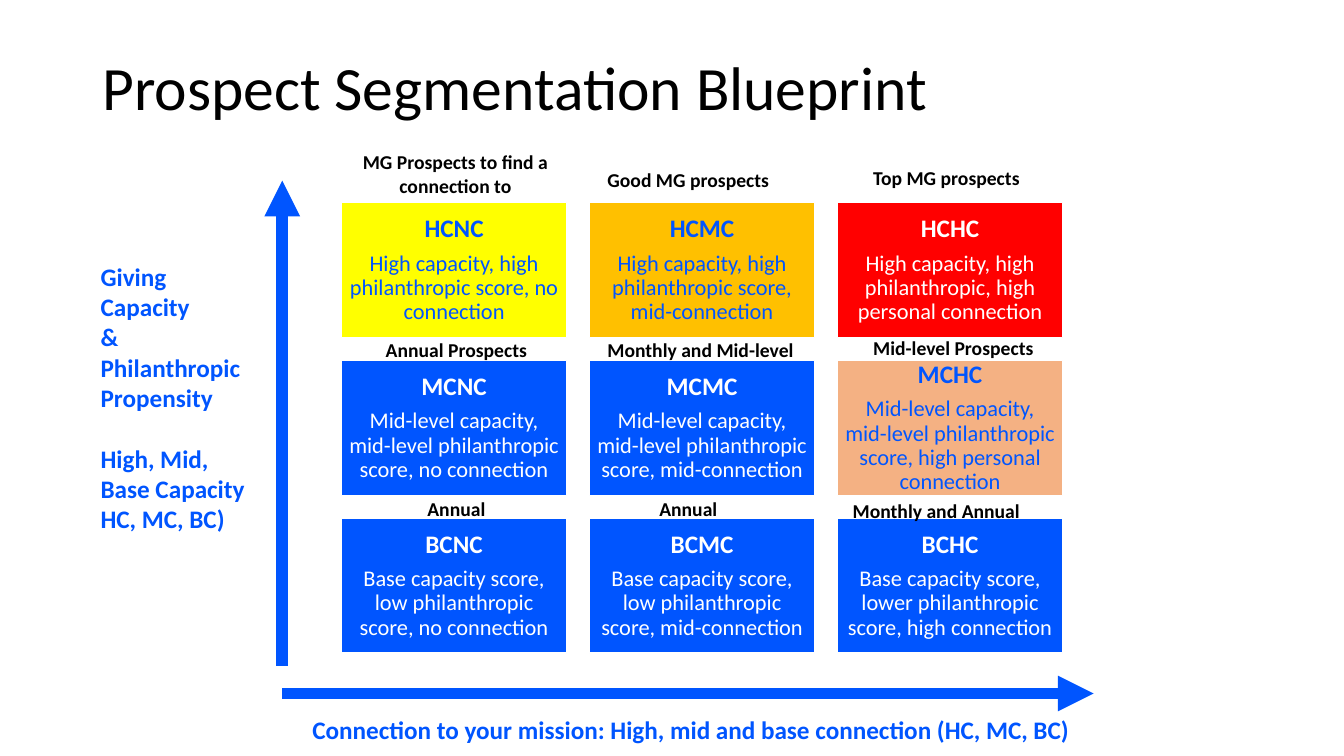
import pptx
import pptx.dml.color
import pptx.enum.shapes
import pptx.enum.text
import pptx.oxml
import pptx.oxml.ns
import pptx.util
from lxml import etree

Pt = pptx.util.Pt
ALIGN = pptx.enum.text.PP_ALIGN
ANCHOR = pptx.enum.text.MSO_ANCHOR
FONT = "Calibri"
COLORS = {"blue": "0055FF", "yellow": "FFFF00", "gold": "FFC000", "red": "FF0000",
          "peach": "F4B183", "white": "FFFFFF", "black": "000000"}

SEGMENTS = [
    [("HCNC", "High capacity, high philanthropic score, no connection",
      "yellow", "blue", "MG Prospects to find a connection to", 3.6, -41),
     ("HCMC", "High capacity, high philanthropic score, mid-connection",
      "gold", "blue", "Good MG prospects", -7.2, -28),
     ("HCHC", "High capacity, high philanthropic, high personal connection",
      "red", "white", "Top MG prospects", 0, -29.5)],
    [("MCNC", "Mid-level capacity, mid-level philanthropic score, no connection",
      "blue", "white", "Annual Prospects", 4.3, -19.4),
     ("MCMC", "Mid-level capacity, mid-level philanthropic score, mid-connection",
      "blue", "white", "Monthly and Mid-level", 1.5, -19.4),
     ("MCHC", "Mid-level capacity, mid-level philanthropic score, high personal connection",
      "peach", "blue", "Mid-level Prospects", 5, -20.9)],
    [("BCNC", "Base capacity score, low philanthropic score, no connection",
      "blue", "white", "Annual", 4.3, -18.7),
     ("BCMC", "Base capacity score, low philanthropic score, mid-connection",
      "blue", "white", "Annual", -7.2, -18.7),
     ("BCHC", "Base capacity score, lower philanthropic score, high connection",
      "blue", "white", "Monthly and Annual", -7.2, -17.3)],
]


def rgb(name):
    """Return the named colour."""
    return pptx.dml.color.RGBColor.from_string(COLORS[name])


def add_run(p, text, size, color, bold=False):
    """Add a formatted run to a paragraph."""
    r = p.add_run()
    r.text = text
    r.font.name, r.font.size, r.font.bold = FONT, Pt(size), bold
    r.font.color.rgb = rgb(color)


def add_text(s, box, lines, size, color, align=ALIGN.LEFT):
    """Add a bold text box with one paragraph per (text, space before) pair."""
    tf = s.shapes.add_textbox(*map(Pt, box)).text_frame
    tf.word_wrap = True
    for i, (text, before) in enumerate(lines):
        p = tf.paragraphs[0] if i == 0 else tf.add_paragraph()
        p.alignment = align
        if before:
            p.space_before = Pt(before)
        add_run(p, text, size, color, True)


def add_arrow(s, x1, y1, x2, y2):
    """Add a thick axis line with a triangular head at its end."""
    sp = s.shapes.add_connector(pptx.enum.shapes.MSO_CONNECTOR.STRAIGHT,
                                Pt(x1), Pt(y1), Pt(x2), Pt(y2))
    sp.line.color.rgb = rgb("blue")
    sp.line.width = Pt(8.5)
    ln = sp.line._get_or_add_ln()
    etree.SubElement(ln, pptx.oxml.ns.qn("a:tailEnd"), type="triangle")
    etree.SubElement(sp._element.spPr, pptx.oxml.ns.qn("a:effectLst"))


def add_title(s, box, text):
    """Place and format the title placeholder."""
    sp = s.shapes.title
    sp.left, sp.top, sp.width, sp.height = map(Pt, box)
    tf = sp.text_frame
    tf.auto_size = pptx.enum.text.MSO_AUTO_SIZE.NONE
    tf.vertical_anchor = ANCHOR.MIDDLE
    p = tf.paragraphs[0]
    p.alignment, p.line_spacing = ALIGN.LEFT, 0.9
    add_run(p, text, 44, "black")


def add_segment(s, box, code, description, fill, color):
    """Add one segment tile with its code and description."""
    sp = s.shapes.add_shape(pptx.enum.shapes.MSO_SHAPE.RECTANGLE, *map(Pt, box))
    sp.shadow.inherit = False
    sp.fill.solid()
    sp.fill.fore_color.rgb = rgb(fill)
    sp.line.color.rgb = rgb("white")
    sp.line.width = Pt(1)
    tf = sp.text_frame
    tf.word_wrap = True
    tf.vertical_anchor = ANCHOR.MIDDLE
    tf.margin_left = tf.margin_right = tf.margin_top = tf.margin_bottom = Pt(5)
    for p, text, size in ((tf.paragraphs[0], code, 18),
                          (tf.add_paragraph(), description, 16)):
        p.alignment, p.line_spacing, p.space_after = ALIGN.CENTER, 0.9, Pt(size * 0.35)
        add_run(p, text, size, color, size == 18)


def add_matrix(s, box):
    """Lay out the segment tiles and their captions in a three by three grid."""
    x, y, w, h = box
    gap_x, gap_y = 16.4, 16.3
    tile_w, tile_h = (w - 2 * gap_x) / 3, (h - 2 * gap_y) / 3
    for i, row in enumerate(SEGMENTS):
        for j, (code, description, fill, color, caption, dx, dy) in enumerate(row):
            left, top = x + j * (tile_w + gap_x), y + i * (tile_h + gap_y)
            add_segment(s, (left, top, tile_w, tile_h), code, description, fill, color)
            add_text(s, (left + dx, top + dy, 155.5, 24.5), [(caption, 0)],
                     14, "black", ALIGN.CENTER)


def add_axes(s, box):
    """Draw both axes around the box and write their names."""
    x, y, w, h = box
    bottom = y + h
    add_arrow(s, x, bottom - 20, x, y)
    add_arrow(s, x, bottom, x + w, bottom)
    add_text(s, (x - 136.8, y + 54, 119.5, 204),
             [("Giving Capacity", 0), ("& Philanthropic Propensity", 0),
              ("High, Mid, Base Capacity", 22), ("HC, MC, BC)", 0)], 18, "blue")
    add_text(s, (x + 14.4, bottom + 11.5, 705.6, 29),
             [("Connection to your mission: High, mid and base connection (HC, MC, BC)", 0)],
             18, "blue")


def main():
    """Build the slide and save it."""
    prs = pptx.Presentation()
    prs.slide_width, prs.slide_height = Pt(960), Pt(540)
    s = prs.slides.add_slide(prs.slide_layouts[5])
    add_title(s, (66, 31, 863, 67), "Prospect Segmentation Blueprint")
    add_matrix(s, (244, 144.7, 515, 321.8))
    add_axes(s, (201.6, 129, 579.6, 366.4))
    prs.save("out.pptx")


if __name__ == "__main__":
    main()
